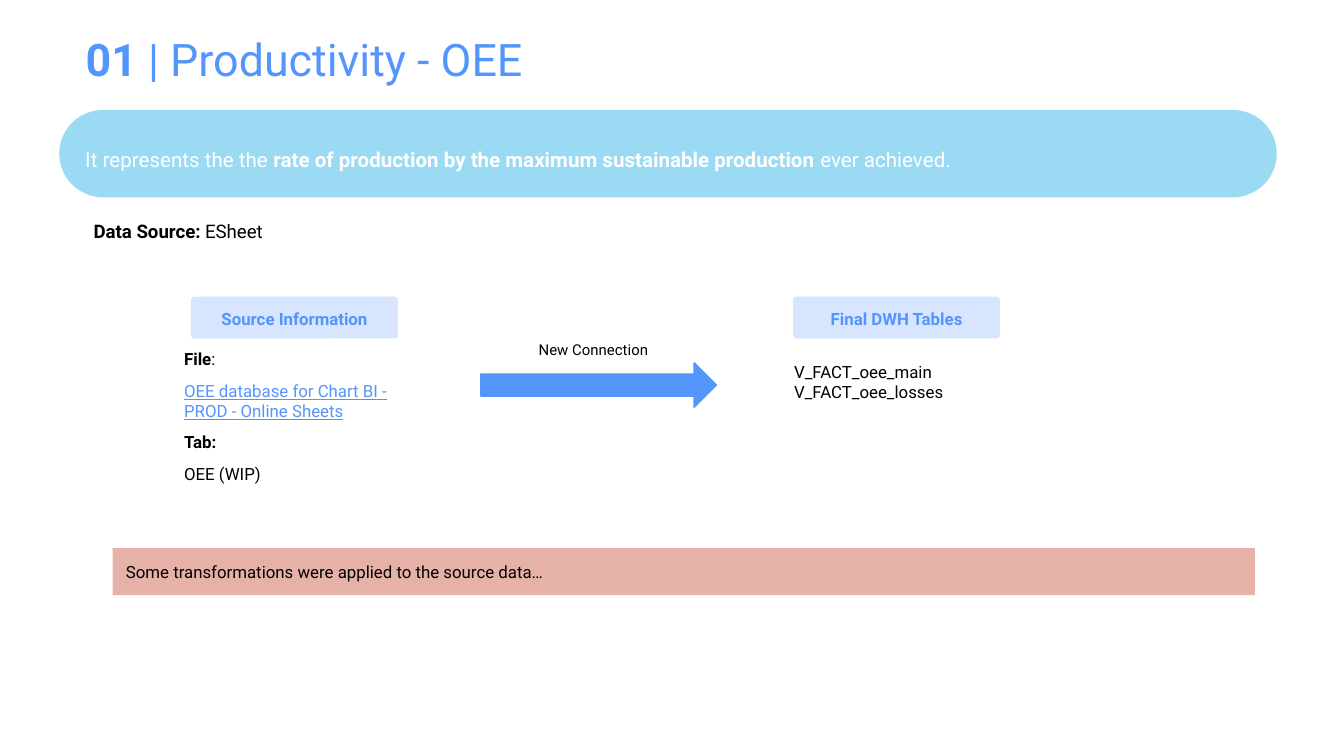
"""Build the Productivity - OEE slide: data source, connection and final tables."""
import pptx
import pptx.dml.color
import pptx.enum.shapes
import pptx.enum.text
import pptx.oxml.ns
import pptx.util
from lxml import etree

Cm = pptx.util.Cm
Pt = pptx.util.Pt
Shape = pptx.enum.shapes.MSO_SHAPE
Anchor = pptx.enum.text.MSO_ANCHOR
Align = pptx.enum.text.PP_ALIGN

FONT = "Roboto"
BLUE, SKY, ROSE, BLACK, WHITE = "5495FC", "81D1F0", "E6B2A8", "000000", "FFFFFF"
INSET = 0.25
BOLD = {"bold": True}
LINK = {"color": BLUE, "underline": True}

TITLE = [[("01 ", BOLD), ("| Productivity - OEE", {})]]
DEFINITION = [[
    ("It represents the the", {}),
    (" rate of production by the maximum sustainable production", BOLD),
    (" ever achieved.", {}),
]]
DATA_SOURCE = [[("Data Source: ", BOLD), ("ESheet", {})]]
SOURCE_DETAILS = [
    [("File", BOLD), (":", {})],
    [("OEE database for Chart BI - PROD - Online Sheets", LINK)],
    [("Tab:", BOLD)],
    [("OEE (WIP)", {})],
]
CONNECTION = [[("New Connection", {})]]
FINAL_TABLES = [[("V_FACT_oee_main", {})], [("V_FACT_oee_losses", {})]]
REMARK = [[("Some transformations were applied to the source data…", {})]]
HEADINGS = [("Source Information", 3.61), ("Final DWH Tables", 14.99)]


def rgb(value):
    """Turn a hex string into a colour."""
    return pptx.dml.color.RGBColor.from_string(value)


def write(shape, paragraphs, size, color=BLACK, anchor=Anchor.TOP, align=Align.LEFT,
          line_spacing=None, space_before=0, vertical_inset=INSET):
    """Fill a shape with paragraphs given as lists of (text, style) runs."""
    frame = shape.text_frame
    frame.word_wrap = True
    frame.vertical_anchor = anchor
    frame.margin_left = frame.margin_right = Cm(INSET)
    frame.margin_top = frame.margin_bottom = Cm(vertical_inset)
    for index, runs in enumerate(paragraphs):
        paragraph = frame.add_paragraph() if index else frame.paragraphs[0]
        paragraph.alignment = align
        if line_spacing:
            paragraph.line_spacing = line_spacing
        if index:
            paragraph.space_before = Pt(space_before)
        for text, style in runs:
            run = paragraph.add_run()
            run.text = text
            run.font.name = FONT
            run.font.size = Pt(size)
            run.font.bold = style.get("bold", False)
            run.font.underline = style.get("underline", False)
            run.font.color.rgb = rgb(style.get("color", color))


def add_text(slide, box, paragraphs, size, **options):
    """Add a text box at (left, top, width, height) in centimetres."""
    shape = slide.shapes.add_textbox(*map(Cm, box))
    write(shape, paragraphs, size, **options)


def add_block(slide, kind, box, color, opacity=100, corner=None):
    """Add a flat filled shape without outline."""
    shape = slide.shapes.add_shape(kind, *map(Cm, box))
    shape.shadow.inherit = False
    shape.fill.solid()
    shape.fill.fore_color.rgb = rgb(color)
    shape.line.fill.background()
    if corner is not None:
        shape.adjustments[0] = corner
    if opacity < 100:
        fill = shape.fill._xPr.find(".//" + pptx.oxml.ns.qn("a:srgbClr"))
        alpha = etree.SubElement(fill, pptx.oxml.ns.qn("a:alpha"))
        alpha.set("val", str(opacity * 1000))
    return shape


def main():
    """Lay out the slide and save it."""
    presentation = pptx.Presentation()
    presentation.slide_width, presentation.slide_height = Cm(25.4), Cm(14.29)
    slide = presentation.slides.add_slide(presentation.slide_layouts[6])

    add_text(slide, (1.37, 0.28, 22.96, 1.65), TITLE, 24, color=BLUE, anchor=Anchor.MIDDLE)

    for heading, left in HEADINGS:
        card = add_block(slide, Shape.ROUNDED_RECTANGLE, (left, 5.61, 3.91, 0.79), BLUE, 23, 0.08)
        write(card, [[(heading, BOLD)]], 9, color=BLUE, anchor=Anchor.MIDDLE,
              align=Align.CENTER, line_spacing=1.15)

    add_text(slide, (3.23, 6.35, 4.98, 3.07), SOURCE_DETAILS, 9, space_before=6)
    arrow = add_block(slide, Shape.RIGHT_ARROW, (9.09, 6.86, 4.45, 0.84), BLUE)
    arrow.line.color.rgb = rgb(BLUE)
    arrow.line.width = Pt(0.75)
    add_text(slide, (9.93, 6.27, 2.69, 0.86), CONNECTION, 8)
    add_text(slide, (14.76, 6.58, 8.33, 1.27), FINAL_TABLES, 9)

    banner = add_block(slide, Shape.ROUNDED_RECTANGLE, (1.12, 2.08, 23.01, 1.65), SKY, 80, 0.5)
    write(banner, DEFINITION, 11, color=WHITE, anchor=Anchor.MIDDLE,
          line_spacing=1.5, vertical_inset=0.13)
    add_text(slide, (1.52, 3.94, 4.67, 0.94), DATA_SOURCE, 10)

    remark = add_block(slide, Shape.RECTANGLE, (2.13, 10.36, 21.59, 0.89), ROSE)
    write(remark, REMARK, 9)

    presentation.save("out.pptx")


if __name__ == "__main__":
    main()
